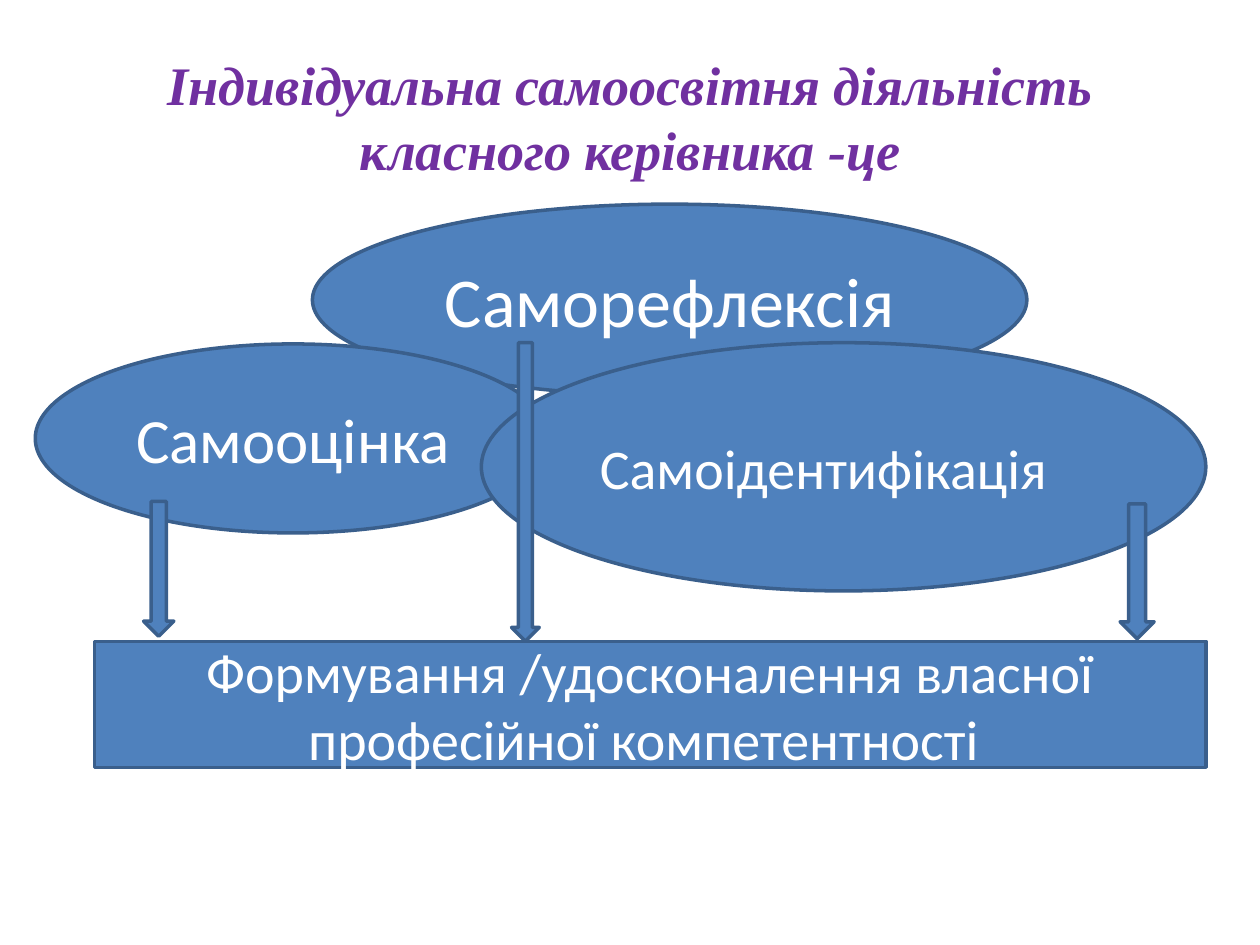
from pptx import Presentation
from pptx.dml.color import RGBColor
from pptx.enum.shapes import MSO_SHAPE
from pptx.enum.text import MSO_ANCHOR, PP_ALIGN
from pptx.util import Inches, Pt

OVAL, RECT, ARROW = MSO_SHAPE.OVAL, MSO_SHAPE.RECTANGLE, MSO_SHAPE.DOWN_ARROW
LEFT, CENTER = PP_ALIGN.LEFT, PP_ALIGN.CENTER
MIDDLE = MSO_ANCHOR.MIDDLE

TITLE = "Індивідуальна самоосвітня діяльність класного керівника -це"
OVALS = [
    ("Саморефлексія", 40, CENTER, (2.2, 0, 5.67, 1.52)),
    ("Самооцінка", 36, CENTER, (0, 1.11, 4.09, 1.5)),
    ("Самоідентифікація", 32, LEFT, (3.54, 1.1, 5.75, 1.97)),
]
RESULT = "Формування /удосконалення власної професійної компетентності "
ARROWS = [(0.86, 2.36, 0.24, 1.07), (8.61, 2.38, 0.27, 1.07), (3.78, 1.1, 0.22, 2.37)]


def color(code):
    """Turn a hex string into a colour."""
    return RGBColor.from_string(code)


def write(shape, text, size, align=CENTER, font="Calibri", code="FFFFFF", strong=False):
    """Put one formatted paragraph in a shape."""
    frame = shape.text_frame
    frame.text = text
    frame.word_wrap = True
    frame.vertical_anchor = MIDDLE
    para = frame.paragraphs[0]
    para.alignment = align
    face = para.runs[0].font
    face.name, face.size = font, Pt(size)
    face.bold = face.italic = strong
    face.color.rgb = color(code)


def draw(slide, kind, box, part):
    """Add a blue shape at a place relative to the box."""
    x, y, w, h = part
    shape = slide.shapes.add_shape(
        kind, Inches(box[0] + x), Inches(box[1] + y), Inches(w), Inches(h))
    shape.shadow.inherit = False
    shape.fill.solid()
    shape.fill.fore_color.rgb = color("4F81BD")
    shape.line.color.rgb = color("3A5F8C")
    shape.line.width = Pt(2)
    return shape


def add_title(slide, box):
    """Write the heading in the box."""
    shape = slide.shapes.add_textbox(*map(Inches, box))
    write(shape, TITLE, 31, font="Times New Roman", code="7030A0", strong=True)


def add_chart(slide, box):
    """Draw the ovals, the result bar and the arrows that lead to it."""
    for text, size, align, part in OVALS:
        write(draw(slide, OVAL, box, part), text, size, align)
    bar = draw(slide, RECT, box, (0.47, box[3] - 1, box[2] - 0.47, 1))
    write(bar, RESULT, 32)
    for part in ARROWS:
        draw(slide, ARROW, box, part)


def main():
    """Build and save the slide."""
    deck = Presentation()
    deck.slide_width, deck.slide_height = Inches(10), Inches(7.5)
    slide = deck.slides.add_slide(deck.slide_layouts[6])
    add_title(slide, (0.5, 0.3, 9, 1.25))
    add_chart(slide, (0.28, 1.62, 9.29, 4.47))
    deck.save("out.pptx")


if __name__ == "__main__":
    main()
